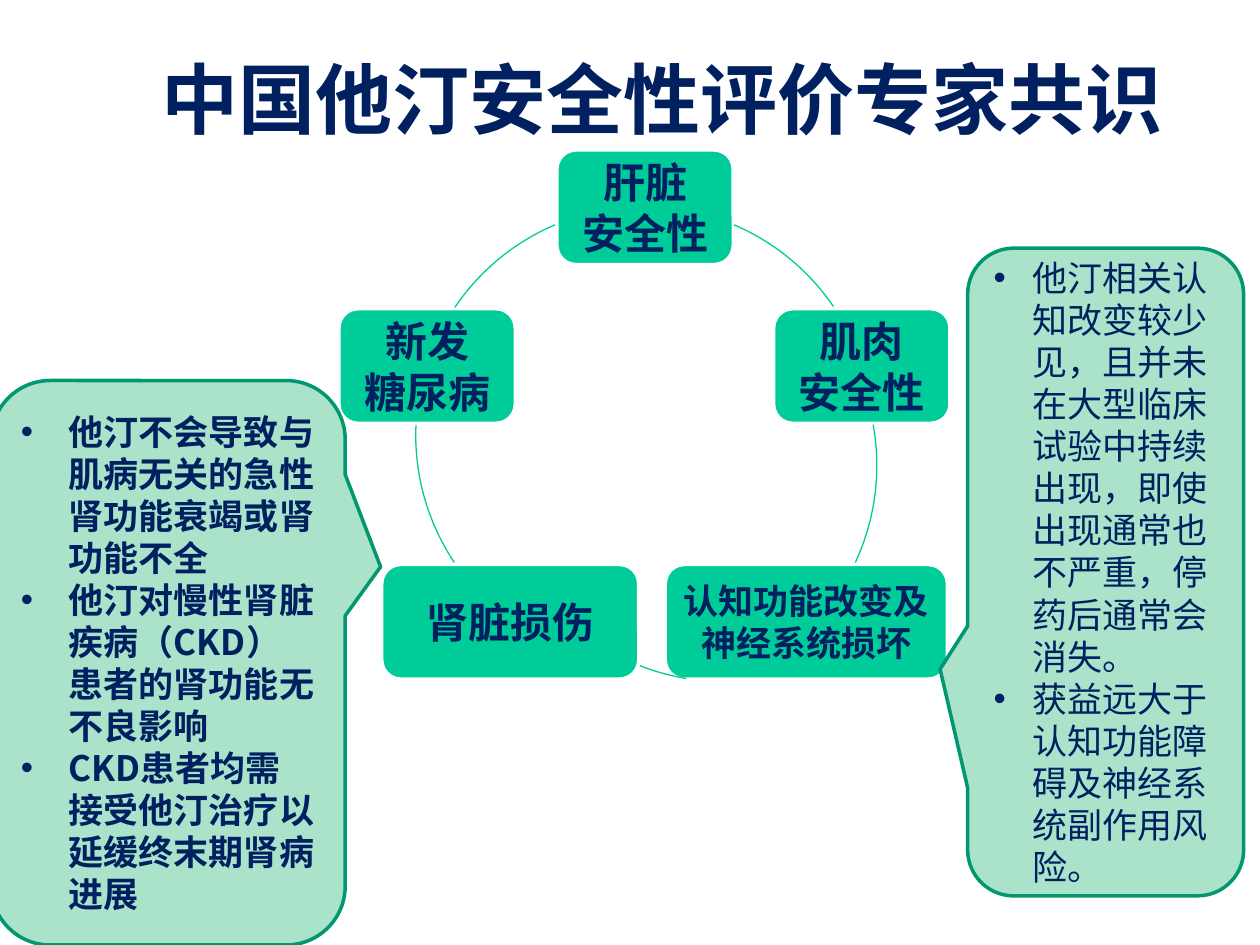
from lxml.etree import SubElement
from pptx import Presentation
from pptx.dml.color import RGBColor
from pptx.enum.shapes import MSO_SHAPE
from pptx.enum.text import MSO_ANCHOR, PP_ALIGN
from pptx.oxml.ns import qn
from pptx.util import Inches, Pt

NAVY = RGBColor(0x00, 0x20, 0x60)
GREEN = RGBColor(0x00, 0xCC, 0x99)
PALE_GREEN = RGBColor(0xAA, 0xE2, 0xCA)
DARK_GREEN = RGBColor(0x00, 0x97, 0x71)
WHITE = RGBColor(0xFF, 0xFF, 0xFF)
TITLE_FONT = "Noto Sans CJK JP"
BODY_FONT = "Noto Sans CJK SC"

TITLE = "中国他汀安全性评价专家共识"
TOPIC_HEIGHT = 0.91
RING_DIAMETER = 3.63
# lines, left, top, width, text size, inset
TOPICS = [
    (["肝脏", "安全性"], 4.42, 1.19, 1.4, 24, 0.1),
    (["肌肉", "安全性"], 6.14, 2.45, 1.4, 24, 0.1),
    (["认知功能改变及神经系统损坏"], 5.28, 4.48, 2.24, 20, 0.08),
    (["肾脏损伤"], 3.03, 4.48, 2.04, 24, 0.1),
    (["新发", "糖尿病"], 2.69, 2.45, 1.4, 24, 0.1),
]
# left and top of the ring, start and end angle in degrees clockwise from the right
RING_ARCS = [
    (3.3, 1.64, 293, 325.8),
    (3.33, 1.88, 349.7, 25.2),
    (3.93, 1.78, 99.4, 111.8),
    (3.3, 1.64, 146.2, 182.7),
    (3.3, 1.64, 214, 247),
]
# points, box, pointer position, bullet indent, bold
CALLOUTS = [
    (["他汀不会导致与肌病无关的急性肾功能衰竭或肾功能不全",
      "他汀对慢性肾脏疾病（CKD）患者的肾功能无不良影响",
      "CKD患者均需接受他汀治疗以延缓终末期肾病进展"],
     (-0.07, 3.02, 2.81, 4.48), (0.6, -0.17), 0.38, True),
    (["他汀相关认知改变较少见，且并未在大型临床试验中持续出现，"
      "即使出现通常也不严重，停药后通常会消失。",
      "获益远大于认知功能障碍及神经系统副作用风险。"],
     (7.68, 1.97, 2.19, 5.14), (-0.6, 0.15), 0.31, False),
]


def add_bullet(paragraph, indent):
    properties = paragraph._p.get_or_add_pPr()
    properties.set("marL", str(Inches(indent)))
    properties.set("indent", str(-Inches(indent)))
    SubElement(properties, qn("a:buFont"), typeface="Arial")
    SubElement(properties, qn("a:buChar"), char="•")


def set_font(paragraph, size, bold, name=BODY_FONT):
    """Format a paragraph, for East Asian characters as well as Latin ones."""
    font = paragraph.font
    font.size, font.bold, font.name = Pt(size), bold, name
    font.color.rgb = NAVY
    SubElement(font._element, qn("a:ea"), typeface=name)


def add_box(slide, preset, box, fill, line):
    shape = slide.shapes.add_shape(preset, *map(Inches, box))
    shape.shadow.inherit = False
    shape.fill.solid()
    shape.fill.fore_color.rgb = fill
    shape.line.color.rgb = line
    shape.line.width = Pt(2)
    shape.text_frame.word_wrap = True
    shape.text_frame.vertical_anchor = MSO_ANCHOR.MIDDLE
    return shape


def add_topic(slide, lines, left, top, width, size, inset):
    frame = add_box(slide, MSO_SHAPE.ROUNDED_RECTANGLE,
                    (left, top, width, TOPIC_HEIGHT), GREEN, WHITE).text_frame
    frame.margin_left = frame.margin_right = Inches(inset)
    frame.margin_top = frame.margin_bottom = Inches(inset)
    frame.text = "\n".join(lines)
    for paragraph in frame.paragraphs:
        paragraph.alignment = PP_ALIGN.CENTER
        set_font(paragraph, size, True)


def add_ring_arc(slide, left, top, start, end):
    arc = slide.shapes.add_shape(
        MSO_SHAPE.ARC, Inches(left), Inches(top),
        Inches(RING_DIAMETER), Inches(RING_DIAMETER))
    arc.shadow.inherit = False
    arc.fill.background()
    arc.line.color.rgb = GREEN
    arc.line.width = Pt(0.75)
    # Angles are stored in 60000ths of a degree, adjustments in 100000ths
    for index, angle in enumerate((start, end)):
        arc.adjustments[index] = angle * 0.6


def add_callout(slide, points, box, pointer, indent, bold):
    callout = add_box(slide, MSO_SHAPE.ROUNDED_RECTANGULAR_CALLOUT, box,
                      PALE_GREEN, DARK_GREEN)
    callout.adjustments[0], callout.adjustments[1] = pointer
    callout.text_frame.text = "\n".join(points)
    for paragraph in callout.text_frame.paragraphs:
        paragraph.alignment = PP_ALIGN.LEFT
        add_bullet(paragraph, indent)
        set_font(paragraph, 20, bold)


def main():
    presentation = Presentation()
    presentation.slide_width, presentation.slide_height = Inches(10), Inches(7.5)
    slide = presentation.slides.add_slide(presentation.slide_layouts[5])

    title = slide.shapes.title
    title.left, title.top = Inches(1.01), Inches(0.39)
    title.width, title.height = Inches(8.5), Inches(0.77)
    title.text_frame.text = TITLE
    title.text_frame.vertical_anchor = MSO_ANCHOR.MIDDLE
    heading = title.text_frame.paragraphs[0]
    heading.alignment = PP_ALIGN.CENTER
    set_font(heading, 44, True, TITLE_FONT)

    for topic, arc in zip(TOPICS, RING_ARCS):
        add_topic(slide, *topic)
        add_ring_arc(slide, *arc)
    for callout in CALLOUTS:
        add_callout(slide, *callout)
    presentation.save("out.pptx")


if __name__ == "__main__":
    main()
